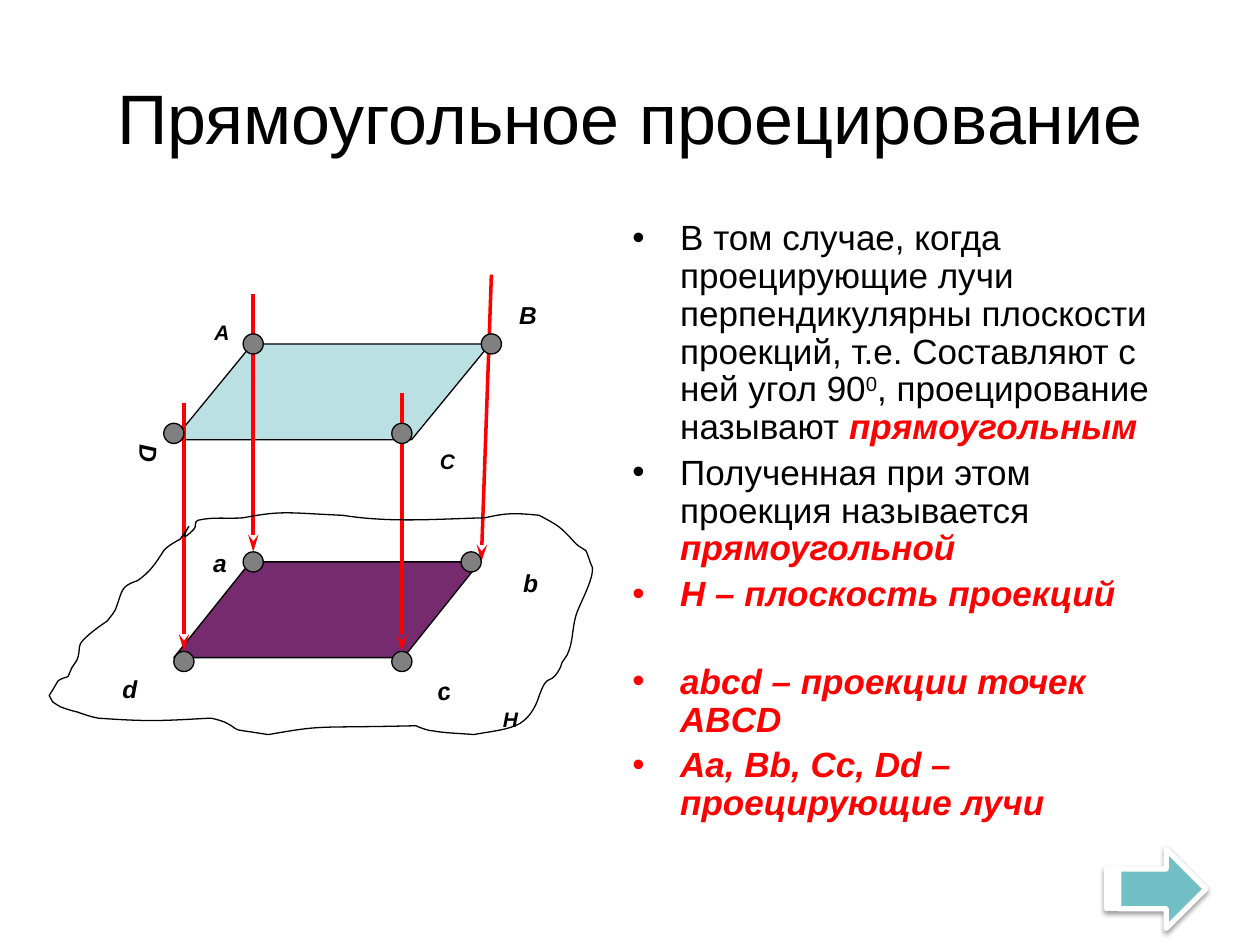
from dataclasses import dataclass

from lxml.etree import SubElement
from pptx import Presentation
from pptx.dml.color import RGBColor
from pptx.enum.shapes import MSO_CONNECTOR as Connector, MSO_SHAPE as Shape
from pptx.enum.text import MSO_ANCHOR as Anchor, MSO_AUTO_SIZE as AutoSize, PP_ALIGN as Align
from pptx.oxml.ns import qn
from pptx.util import Inches, Pt


@dataclass(frozen=True)
class Theme:
    font: str = "Arial"
    black: str = "000000"
    red: str = "FF0000"
    white: str = "FFFFFF"
    marker: str = "808080"
    object_plane: str = "BBE0E3"
    projection: str = "752B6E"
    arrow: str = "72BFC5"
    title_size: int = 40
    body_size: int = 20
    label_size: int = 14
    small_size: int = 12


THEME = Theme()
PLAIN = {}
KEY = {"bold": True, "italic": True, "color": THEME.red}
BODY = [
    (4.5, [
        ("В том случае, когда проецирующие лучи перпендикулярны плоскости "
         "проекций, т.е. Составляют с ней угол 90", PLAIN),
        ("0", {"baseline": 30000}),
        (", проецирование называют ", PLAIN),
        ("прямоугольным", KEY),
    ]),
    (4.5, [("Полученная при этом проекция называется ", PLAIN), ("прямоугольной", KEY)]),
    (4.5, [("Н – плоскость проекций", KEY)]),
    (28.5, [("abcd – проекции точек ABCD", KEY)]),
    (4.5, [("Aa, Bb, Cc, Dd – проецирующие лучи", KEY)]),
]
PLANES = [
    ((1.38, 4.46, 2.43, 0.76), 0.8, THEME.projection),
    ((1.38, 2.73, 2.51, 0.76), 0.82, THEME.object_plane),
]
RAYS = [
    ((1.46, 3.2), (1.46, 5.17)),
    ((2.01, 2.33), (2.01, 4.38)),
    ((3.19, 3.12), (3.19, 5.17)),
    ((3.9, 2.18), (3.82, 4.46)),
]
MARKERS = [
    (3.19, 5.25), (1.46, 5.25), (2.01, 4.46), (3.74, 4.46),
    (3.9, 2.73), (3.19, 3.44), (1.38, 3.44), (2.01, 2.73),
]
LABELS = [
    ("А", (1.69, 2.49, 0.11, 0.19), THEME.small_size, 0),
    ("В", (4.06, 2.33, 0.16, 0.31), THEME.label_size, 0),
    ("С", (3.43, 3.51, 0.16, 0.27), THEME.small_size, 0),
    ("D", (1.03, 3.47, 0.31, 0.24), THEME.label_size, 91.4),
    ("a", (1.69, 4.3, 0.1, 0.23), THEME.label_size, 0),
    ("b", (4.06, 4.46, 0.19, 0.15), THEME.label_size, 0),
    ("c", (3.43, 5.32, 0.13, 0.26), THEME.label_size, 349.9),
    ("d", (0.92, 5.32, 0.15, 0.08), THEME.label_size, 0),
    ("H", (3.98, 5.56, 0.11, 0.19), THEME.small_size, 0),
]
PLANE_START = (0.39, 5.52)
PLANE_CURVES = [
    (0.49, 5.37, 0.43, 5.41, 0.54, 5.37), (0.55, 5.35, 0.56, 5.32, 0.57, 5.3),
    (0.58, 5.28, 0.6, 5.26, 0.61, 5.24), (0.65, 5.14, 0.6, 5.14, 0.67, 5.07),
    (0.72, 5.02, 0.79, 4.97, 0.85, 4.93), (0.88, 4.89, 0.92, 4.85, 0.93, 4.8),
    (0.97, 4.69, 0.96, 4.65, 1.09, 4.61), (1.19, 4.54, 1.23, 4.48, 1.3, 4.37),
    (1.33, 4.33, 1.43, 4.28, 1.43, 4.28), (1.62, 4, 1.34, 4.4, 1.54, 4.2),
    (1.56, 4.18, 1.54, 4.14, 1.57, 4.13), (1.69, 4.1, 1.81, 4.12, 1.93, 4.11),
    (2.24, 4.05, 2.28, 4.07, 2.72, 4.09), (3.1, 4.15, 3.45, 4.12, 3.85, 4.11),
    (4.02, 4.07, 4.08, 4.07, 4.28, 4.09), (4.35, 4.13, 4.42, 4.16, 4.48, 4.22),
    (4.61, 4.35, 4.54, 4.3, 4.65, 4.37), (4.67, 4.41, 4.68, 4.46, 4.7, 4.5),
    (4.72, 4.59, 4.59, 4.81, 4.57, 4.89), (4.54, 4.99, 4.55, 5.1, 4.5, 5.2),
    (4.49, 5.22, 4.47, 5.24, 4.46, 5.26), (4.45, 5.28, 4.45, 5.31, 4.43, 5.33),
    (4.35, 5.45, 4.35, 5.33, 4.28, 5.52), (4.25, 5.62, 4.19, 5.72, 4.09, 5.76),
    (3.99, 5.8, 3.86, 5.81, 3.76, 5.83), (3.65, 5.82, 3.54, 5.82, 3.43, 5.8),
    (3.39, 5.8, 3.3, 5.76, 3.3, 5.76), (2.47, 5.78, 2.59, 5.75, 2.13, 5.83),
    (2.06, 5.82, 2, 5.81, 1.93, 5.8), (1.85, 5.79, 1.88, 5.78, 1.8, 5.74),
    (1.79, 5.73, 1.69, 5.7, 1.67, 5.7), (1.29, 5.72, 1.2, 5.73, 0.78, 5.7),
    (0.72, 5.69, 0.67, 5.67, 0.61, 5.65), (0.56, 5.64, 0.48, 5.61, 0.48, 5.61),
    (0.4, 5.56, 0.43, 5.59, 0.39, 5.52),
]


class SlideBuilder:
    """Draws styled elements on the current slide."""

    def __init__(self, slide, theme):
        self.slide = slide
        self.theme = theme

    def apply(self, target, values):
        for name, value in values.items():
            setattr(target, name, value)

    def add_run(self, paragraph, text, size, color=None, baseline=None, **values):
        run = paragraph.add_run()
        run.text = text
        self.apply(run.font, {"name": self.theme.font, "size": Pt(size), **values})
        run.font.color.rgb = RGBColor.from_string(color or self.theme.black)
        if baseline:
            run.font._element.set("baseline", str(baseline))

    def paint(self, shape, fill, line, width):
        shape.shadow.inherit = False
        if fill:
            shape.fill.solid()
            shape.fill.fore_color.rgb = RGBColor.from_string(fill)
        else:
            shape.fill.background()
        shape.line.color.rgb = RGBColor.from_string(line)
        shape.line.width = Pt(width)
        return shape

    def title(self, text, box):
        shape = self.slide.shapes.title
        self.apply(shape, dict(zip(("left", "top", "width", "height"), map(Inches, box))))
        self.apply(shape.text_frame, {
            "vertical_anchor": Anchor.MIDDLE, "word_wrap": True, "auto_size": AutoSize.NONE})
        paragraph = shape.text_frame.paragraphs[0]
        paragraph.alignment = Align.CENTER
        self.add_run(paragraph, text, self.theme.title_size)

    def bullets(self, items, box):
        frame = self.slide.shapes.add_textbox(*map(Inches, box)).text_frame
        frame.word_wrap = True
        for index, (gap, runs) in enumerate(items):
            paragraph = frame.add_paragraph() if index else frame.paragraphs[0]
            self.apply(paragraph, {"line_spacing": 0.9, "space_before": Pt(gap)})
            properties = paragraph._p.get_or_add_pPr()
            properties.set("marL", str(Inches(0.38)))
            properties.set("indent", str(Inches(-0.38)))
            SubElement(properties, qn("a:buFont"), typeface=self.theme.font)
            SubElement(properties, qn("a:buChar"), char="•")
            for text, values in runs:
                self.add_run(paragraph, text, self.theme.body_size, **values)

    def shape(self, kind, box, fill, line=None, width=0.75, adjustment=None):
        shape = self.slide.shapes.add_shape(kind, *map(Inches, box))
        if adjustment is not None:
            shape.adjustments[0] = adjustment
        return self.paint(shape, fill, line or self.theme.black, width)

    def marker(self, x, y, size=0.16):
        box = (x - size / 2, y - size / 2, size, size)
        self.shape(Shape.FLOWCHART_CONNECTOR, box, self.theme.marker)

    def ray(self, start, end):
        ray = self.slide.shapes.add_connector(Connector.STRAIGHT, *map(Inches, start + end))
        ray.line.color.rgb = RGBColor.from_string(self.theme.red)
        ray.line.width = Pt(2)
        properties = ray._element.spPr
        SubElement(properties.find(qn("a:ln")), qn("a:tailEnd"), type="stealth", len="lg")
        SubElement(properties, qn("a:effectLst"))

    def label(self, text, box, size, rotation):
        shape = self.slide.shapes.add_textbox(*map(Inches, box))
        shape.rotation = rotation
        anchor = Anchor.MIDDLE if 45 < rotation < 135 else Anchor.TOP
        self.apply(shape.text_frame, {"vertical_anchor": anchor, "word_wrap": False})
        paragraph = shape.text_frame.paragraphs[0]
        paragraph.alignment = Align.CENTER
        self.add_run(paragraph, text, size, bold=True, italic=True)

    def outline(self, start, curves):
        builder = self.slide.shapes.build_freeform(*map(Inches, start))
        builder.add_line_segments([tuple(map(Inches, curve[4:])) for curve in curves])
        shape = self.paint(builder.convert_to_shape(), None, self.theme.black, 0.75)
        segments = list(shape._element.iter(qn("a:lnTo")))
        for segment, curve in zip(segments, curves):
            segment.tag = qn("a:cubicBezTo")
            segment.remove(segment[0])
            for x, y in zip(curve[::2], curve[1::2]):
                SubElement(segment, qn("a:pt"), x=str(Inches(x) - shape.left),
                           y=str(Inches(y) - shape.top))

    def next_arrow(self, box):
        arrow = self.shape(
            Shape.STRIPED_RIGHT_ARROW, box, self.theme.arrow, self.theme.white, 3)
        effects = arrow._element.spPr.find(qn("a:effectLst"))
        shadow = SubElement(
            effects, qn("a:outerShdw"), blurRad=str(Pt(3.1)), dist=str(Pt(1.6)),
            dir="5400000", rotWithShape="0")
        color = SubElement(shadow, qn("a:srgbClr"), val=self.theme.black)
        SubElement(color, qn("a:alpha"), val="38000")


def main():
    presentation = Presentation()
    presentation.slide_width, presentation.slide_height = Inches(10), Inches(7.5)
    slide = presentation.slides.add_slide(presentation.slide_layouts[5])
    builder = SlideBuilder(slide, THEME)
    builder.title("Прямоугольное проецирование", (0.5, 0.3, 9, 1.25))
    builder.bullets(BODY, (4.92, 1.7, 4.42, 4.95))
    for box, slant, fill in PLANES:
        builder.shape(Shape.PARALLELOGRAM, box, fill, adjustment=slant)
    for start, end in RAYS:
        builder.ray(start, end)
    for label in LABELS:
        builder.label(*label)
    for center in MARKERS:
        builder.marker(*center)
    builder.outline(PLANE_START, PLANE_CURVES)
    builder.next_arrow((8.78, 6.74, 0.79, 0.63))
    presentation.save("out.pptx")


if __name__ == "__main__":
    main()
